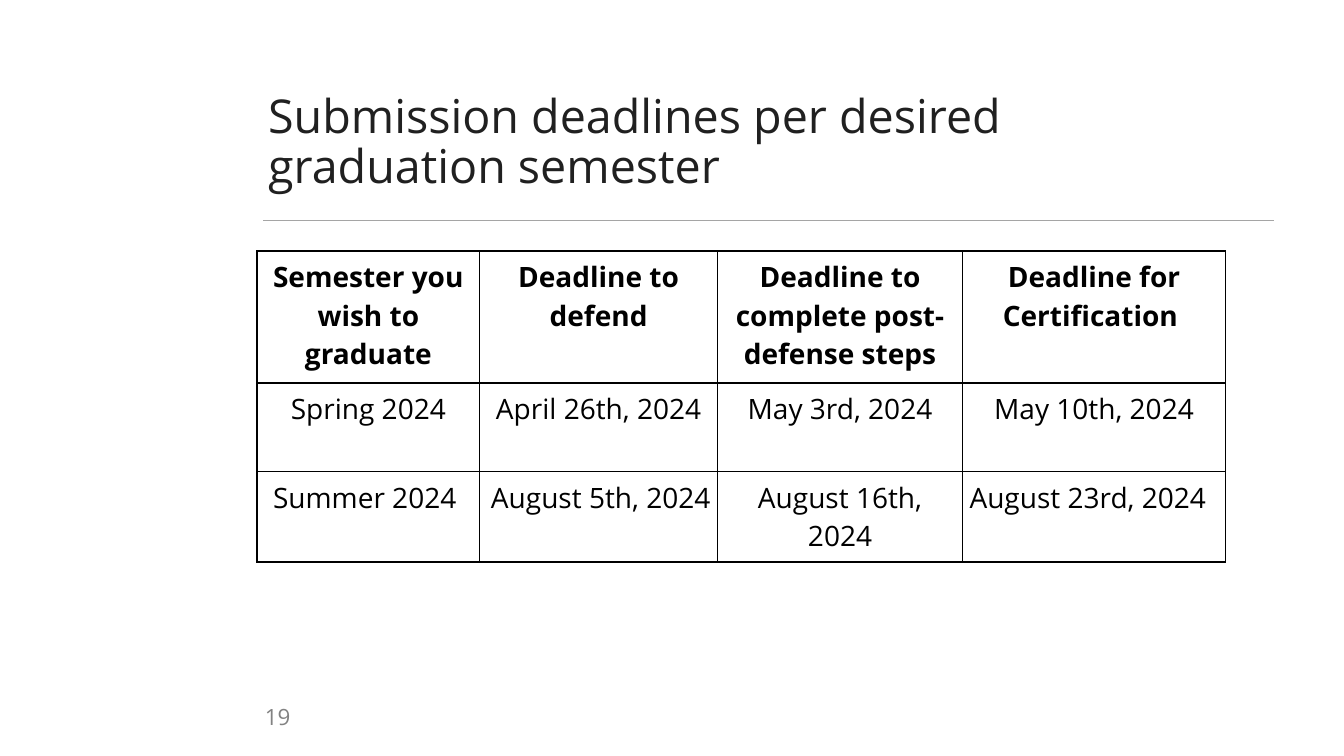
from dataclasses import dataclass

from lxml import etree
from pptx import Presentation
from pptx.dml.color import RGBColor
from pptx.enum.shapes import MSO_CONNECTOR
from pptx.enum.text import MSO_ANCHOR, MSO_AUTO_SIZE, PP_ALIGN
from pptx.oxml.ns import qn
from pptx.slide import Slide
from pptx.table import _Cell
from pptx.text.text import TextFrame
from pptx.util import Pt

LEFT, CENTER, RIGHT = PP_ALIGN.LEFT, PP_ALIGN.CENTER, PP_ALIGN.RIGHT
MIDDLE, TOP = MSO_ANCHOR.MIDDLE, MSO_ANCHOR.TOP
NO_FIT = MSO_AUTO_SIZE.NONE
STRAIGHT = MSO_CONNECTOR.STRAIGHT
TITLE_ONLY = 5


@dataclass(frozen=True)
class Theme:
    font: str = "Open Sans"
    title: str = "202020"
    text: str = "000000"
    number: str = "828282"
    rule: str = "A5A5A5"
    paper: str = "FFFFFF"
    title_size: float = 33.3
    table_size: float = 20
    number_size: float = 16
    line_width: float = 1


@dataclass(frozen=True)
class Entry:
    text: str
    align: PP_ALIGN = CENTER


THEME = Theme()
COLUMN_WIDTHS = (159.1, 169.9, 175, 187.9)
ROW_HEIGHTS = (94.3, 63.4, 63.4)
DEADLINES = (
    (Entry("Semester you wish to graduate"), Entry("Deadline to defend"),
     Entry("Deadline to complete post-defense steps"), Entry("Deadline for Certification ")),
    (Entry("Spring 2024"), Entry("April 26th, 2024"),
     Entry("May 3rd, 2024"), Entry("May 10th, 2024")),
    (Entry("Summer 2024 "), Entry("August 5th, 2024", RIGHT),
     Entry("August 16th, 2024"), Entry("August 23rd, 2024", LEFT)),
)


def write(tf: TextFrame, text: str, *, size: float, color: str, align: PP_ALIGN = LEFT,
          bold: bool = False, spacing: float = 1.0) -> None:
    p = tf.paragraphs[0]
    p.alignment = align
    p.line_spacing = spacing
    r = p.add_run()
    r.text = text
    r.font.name = THEME.font
    r.font.size = Pt(size)
    r.font.bold = bold
    r.font.color.rgb = RGBColor.from_string(color)


def set_frame(tf: TextFrame, margin: float) -> None:
    tf.word_wrap = True
    tf.auto_size = NO_FIT
    tf.vertical_anchor = MIDDLE
    tf.margin_left = tf.margin_right = tf.margin_top = tf.margin_bottom = Pt(margin)


def add_borders(cell: _Cell) -> None:
    tc_pr = cell._tc.get_or_add_tcPr()
    for i, side in enumerate(("a:lnL", "a:lnR", "a:lnT", "a:lnB")):
        ln = etree.Element(qn(side), w=str(Pt(THEME.line_width)))
        fill = etree.SubElement(ln, qn("a:solidFill"))
        etree.SubElement(fill, qn("a:srgbClr"), val=THEME.text)
        tc_pr.insert(i, ln)


def add_title(s: Slide) -> None:
    sp = s.shapes.title
    sp.left, sp.top, sp.width, sp.height = Pt(187.9), Pt(63.4), Pt(657.4), Pt(78.5)
    set_frame(sp.text_frame, 3.6)
    write(sp.text_frame, "Submission deadlines per desired graduation semester",
          size=THEME.title_size, color=THEME.title, spacing=0.9)


def add_rule(s: Slide) -> None:
    line = s.shapes.add_connector(STRAIGHT, Pt(187.9), Pt(157.7), Pt(910.1), Pt(157.7))
    line.line.color.rgb = RGBColor.from_string(THEME.rule)
    line.line.width = Pt(THEME.line_width)
    etree.SubElement(line._element.spPr, qn("a:effectLst"))


def add_page_number(s: Slide) -> None:
    sp = s.shapes.add_textbox(Pt(183.6), Pt(498.2), Pt(27.4), Pt(26.6))
    set_frame(sp.text_frame, 3.6)
    write(sp.text_frame, "19", size=THEME.number_size, color=THEME.number, align=RIGHT)


def add_deadlines(s: Slide) -> None:
    table = s.shapes.add_table(
        len(ROW_HEIGHTS), len(COLUMN_WIDTHS), Pt(183.6), Pt(179.3),
        Pt(sum(COLUMN_WIDTHS)), Pt(sum(ROW_HEIGHTS))).table
    table.first_row = table.horz_banding = False
    for column, width in zip(table.columns, COLUMN_WIDTHS):
        column.width = Pt(width)
    for i, (row, height, entries) in enumerate(zip(table.rows, ROW_HEIGHTS, DEADLINES)):
        row.height = Pt(height)
        for cell, entry in zip(row.cells, entries):
            cell.fill.solid()
            cell.fill.fore_color.rgb = RGBColor.from_string(THEME.paper)
            add_borders(cell)
            cell.vertical_anchor = TOP
            cell.margin_left = cell.margin_right = Pt(5)
            cell.margin_top = cell.margin_bottom = Pt(5)
            write(cell.text_frame, entry.text, size=THEME.table_size, color=THEME.text,
                  align=entry.align, bold=i == 0)


def main() -> None:
    prs = Presentation()
    prs.slide_width, prs.slide_height = Pt(960), Pt(540)
    s = prs.slides.add_slide(prs.slide_layouts[TITLE_ONLY])

    # Heading
    add_rule(s)
    add_title(s)

    # Deadlines and page number
    add_page_number(s)
    add_deadlines(s)

    prs.save("out.pptx")


if __name__ == "__main__":
    main()
